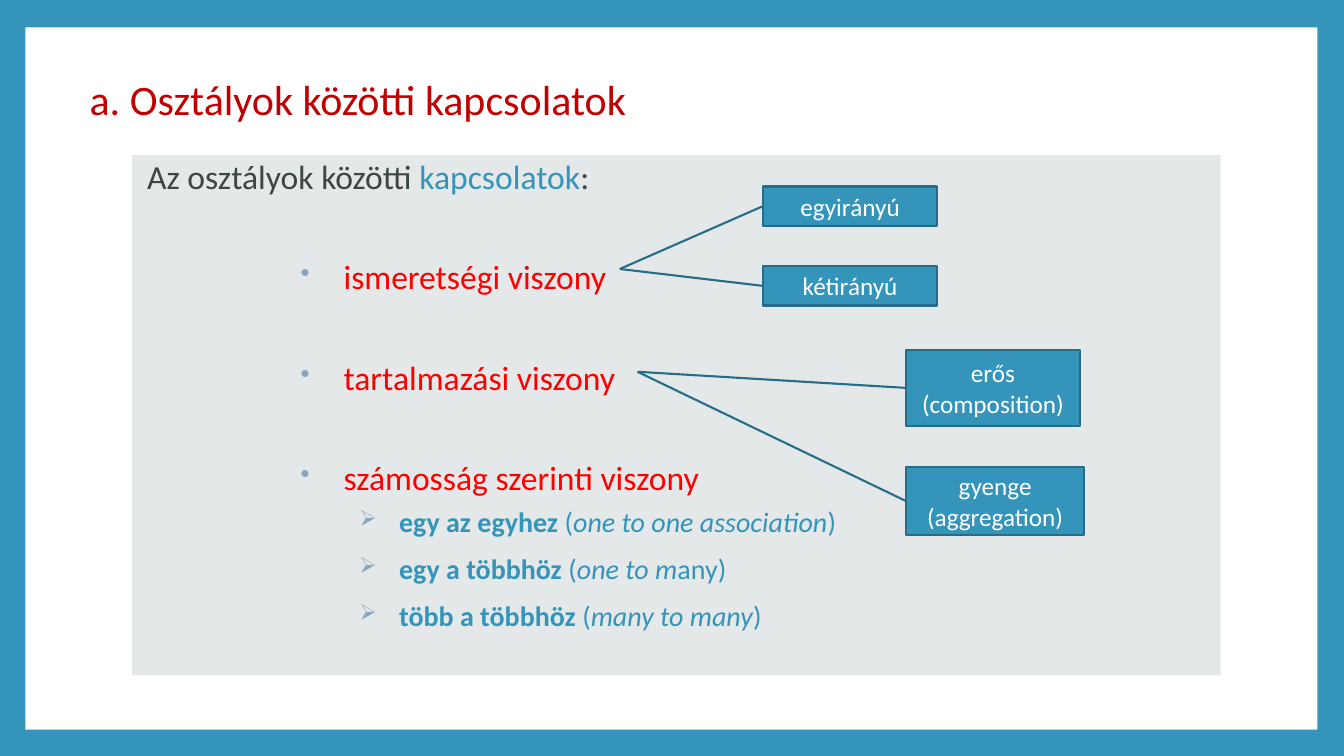
from dataclasses import dataclass

from lxml import etree
from pptx import Presentation
from pptx.dml.color import RGBColor
from pptx.enum.shapes import MSO_SHAPE
from pptx.enum.text import MSO_ANCHOR, PP_ALIGN
from pptx.oxml.ns import qn
from pptx.util import Cm, Pt

RECTANGLE = MSO_SHAPE.RECTANGLE
CALLOUT = MSO_SHAPE.LINE_CALLOUT_1
TOP, MIDDLE = MSO_ANCHOR.TOP, MSO_ANCHOR.MIDDLE
LEFT, CENTER = PP_ALIGN.LEFT, PP_ALIGN.CENTER


@dataclass(frozen=True)
class Theme:
    font: str = "Calibri"
    accent: str = "3494BA"
    outline: str = "266D8A"
    paper: str = "FFFFFF"
    panel: str = "E4E8E8"
    title: str = "C00000"
    ink: str = "3D4647"
    relation: str = "FF0000"
    bullet: str = "86A6C1"
    title_size: int = 30
    body_size: int = 24
    detail_size: int = 20
    callout_size: int = 18


THEME = Theme()

TITLE = "a. Osztályok közötti kapcsolatok"
INTRO = [("Az osztályok közötti ", THEME.ink), ("kapcsolatok", THEME.accent), (":", THEME.ink)]
RELATIONS = ["ismeretségi viszony", "tartalmazási viszony", "számosság szerinti viszony"]
CARDINALITIES = [
    ("egy az egyhez ", "one to one association", ")"),
    ("egy a többhöz ", "one to m", "any)"),
    ("több a többhöz ", "many to many", ")"),
]

SLIDE_SIZE = (33.87, 19.05)
PAPER_BOX = (0.64, 0.69, 32.56, 17.7)
TITLE_BOX = (2.01, 1.22, 27.43, 2.72)
PANEL_BOX = (3.33, 3.91, 27.43, 13.11)

CALLOUTS = [
    ((15.62, 6.78), [
        ("egyirányú", (19.23, 4.7, 4.39, 0.99)),
        ("kétirányú", (19.23, 6.71, 4.39, 0.99)),
    ]),
    ((16.07, 9.37), [
        ("erős (composition)", (22.83, 8.81, 4.39, 1.93)),
        ("gyenge (aggregation)", (22.83, 11.76, 4.5, 1.73)),
    ]),
]


def rgb(value):
    return RGBColor.from_string(value)


def add_box(page, kind, box, fill, anchor, line=None):
    shape = page.shapes.add_shape(kind, *map(Cm, box))
    shape.shadow.inherit = False
    shape.fill.solid()
    shape.fill.fore_color.rgb = rgb(fill)
    if line:
        shape.line.color.rgb = rgb(line)
        shape.line.width = Pt(1.5)
    else:
        shape.line.fill.background()
    shape.text_frame.word_wrap = True
    shape.text_frame.vertical_anchor = anchor
    return shape


def style(para, size, color=None, align=LEFT, spacing=1.0, before=0, after=0):
    para.alignment = align
    para.line_spacing = spacing
    para.space_before, para.space_after = Pt(before), Pt(after)
    para.font.name = THEME.font
    para.font.size = Pt(size)
    if color:
        para.font.color.rgb = rgb(color)


def add_span(para, text, color=None, bold=None, italic=None):
    span = para.add_run()
    span.text = text
    span.font.bold, span.font.italic = bold, italic
    if color:
        span.font.color.rgb = rgb(color)


def set_indent(para, margin, indent=0, bullet=None):
    properties = para._p.get_or_add_pPr()
    properties.set("marL", str(Cm(margin)))
    properties.set("indent", str(Cm(indent)))
    if bullet:
        color = etree.SubElement(properties, qn("a:buClr"))
        etree.SubElement(color, qn("a:srgbClr"), val=THEME.bullet)
        etree.SubElement(properties, qn("a:buSzPct"), val="80000")
        etree.SubElement(properties, qn("a:buChar"), char=bullet)


def add_title(page):
    box = page.shapes.add_textbox(*map(Cm, TITLE_BOX))
    box.text_frame.word_wrap = True
    box.text_frame.vertical_anchor = MIDDLE
    para = box.text_frame.paragraphs[0]
    add_span(para, TITLE)
    style(para, THEME.title_size, THEME.title, spacing=0.9)


def add_panel(page):
    frame = add_box(page, RECTANGLE, PANEL_BOX, THEME.panel, TOP).text_frame
    para = frame.paragraphs[0]
    set_indent(para, 0.13)
    style(para, THEME.body_size, spacing=0.9, before=14)
    for text, color in INTRO:
        add_span(para, text, color)
    for text in RELATIONS:
        para = frame.add_paragraph()
        set_indent(para, 5.08, -1.08, "•")
        style(para, THEME.body_size, THEME.relation, spacing=2.0, before=14)
        add_span(para, text)
    for name, english, ending in CARDINALITIES:
        para = frame.add_paragraph()
        set_indent(para, 6.48, -1.0, "➢")
        style(para, THEME.detail_size, THEME.accent, spacing=1.14, before=2, after=4)
        add_span(para, name, bold=True)
        add_span(para, "(")
        add_span(para, english, italic=True)
        add_span(para, ending)


def add_callout(page, text, box, target):
    left, top, width, height = box
    shape = add_box(page, CALLOUT, box, THEME.accent, MIDDLE, THEME.outline)
    ends = (0.5, 0, (target[1] - top) / height, (target[0] - left) / width)
    for index, value in enumerate(ends):
        shape.adjustments[index] = value
    para = shape.text_frame.paragraphs[0]
    add_span(para, text)
    style(para, THEME.callout_size, THEME.paper, CENTER)


def main():
    deck = Presentation()
    deck.slide_width, deck.slide_height = map(Cm, SLIDE_SIZE)
    page = deck.slides.add_slide(deck.slide_layouts[6])
    page.background.fill.solid()
    page.background.fill.fore_color.rgb = rgb(THEME.accent)
    add_box(page, RECTANGLE, PAPER_BOX, THEME.paper, TOP)
    add_title(page)
    add_panel(page)
    for target, labels in CALLOUTS:
        for text, box in labels:
            add_callout(page, text, box, target)
    deck.save("out.pptx")


if __name__ == "__main__":
    main()
